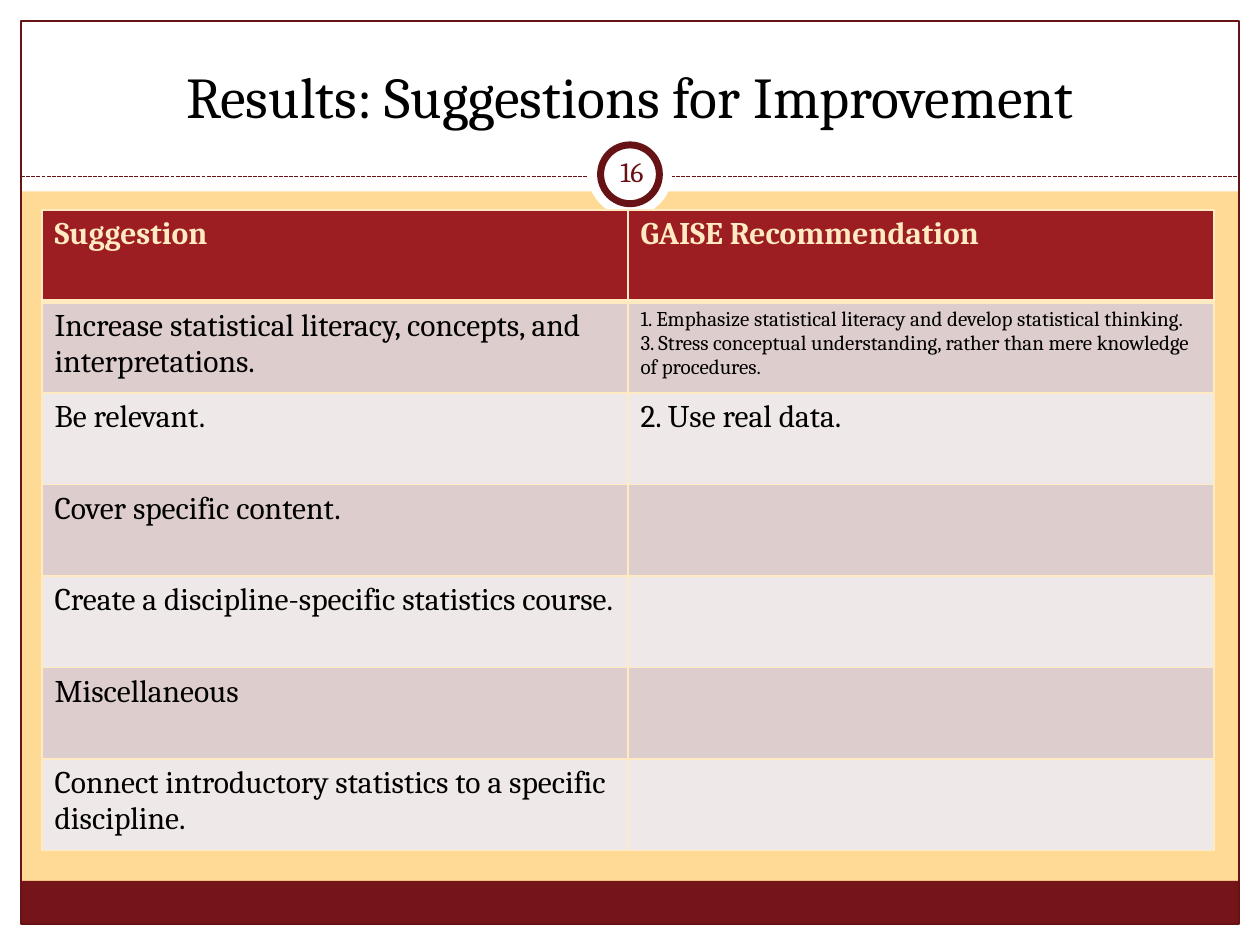
from lxml.etree import SubElement
from pptx import Presentation
from pptx.dml.color import RGBColor as Rgb
from pptx.enum.dml import MSO_LINE as Dash
from pptx.enum.shapes import MSO_CONNECTOR as Link, MSO_SHAPE as Kind
from pptx.enum.text import MSO_ANCHOR as Anchor, PP_ALIGN as Align
from pptx.oxml.ns import qn
from pptx.util import Inches, Pt

COLS, ROWS = 60, 45
UNIT = Inches(10) / COLS

HEX = {
    "page": "FFDA94", "white": "FFFFFF", "foot": "751519", "frame": "671316",
    "head": "9C1D22", "cream": "FFEAC1", "dark": "DECDCD", "light": "EFE8E8",
    "black": "000000",
}

GOALS = [
    ("Suggestion", ["GAISE Recommendation"]),
    ("Increase statistical literacy, concepts, and interpretations.",
     ["1. Emphasize statistical literacy and develop statistical thinking.",
      "3. Stress conceptual understanding, rather than mere knowledge of procedures."]),
    ("Be relevant.", ["2. Use real data."]),
    ("Cover specific content.", []),
    ("Create a discipline-specific statistics course.", []),
    ("Miscellaneous", []),
    ("Connect introductory statistics to a specific discipline.", []),
]


def tint(name):
    return Rgb.from_string(HEX[name])


def grid(*cells):
    """Turn counts of grid cells into slide lengths."""
    return [round(n * UNIT) for n in cells]


def paint(fill, name):
    fill.solid()
    fill.fore_color.rgb = tint(name)


def write(frame, lines, size, hue, bold=False, align=Align.LEFT):
    for i, line in enumerate(lines):
        para = frame.paragraphs[0] if i == 0 else frame.add_paragraph()
        para.alignment = align
        run = para.add_run()
        run.text = line
        form = {"name": "Cambria", "size": Pt(size), "bold": bold}
        for key, value in form.items():
            setattr(run.font, key, value)
        run.font.color.rgb = tint(hue)


def add_shape(slide, kind, box, fill=None, line=None, width=0.75):
    shape = slide.shapes.add_shape(kind, *grid(*box))
    shape.shadow.inherit = False
    if fill:
        paint(shape.fill, fill)
    else:
        shape.fill.background()
    if line:
        shape.line.color.rgb = tint(line)
        shape.line.width = Pt(width)
    else:
        shape.line.fill.background()


def add_rule(slide, ends):
    rule = slide.shapes.add_connector(Link.STRAIGHT, *grid(*ends))
    rule.line.color.rgb = tint("frame")
    rule.line.width = Pt(0.75)
    rule.line.dash_style = Dash.SQUARE_DOT
    SubElement(rule._element.spPr, qn("a:effectLst"))


def add_text(slide, box, text, size, hue, anchor, inset=(0.1, 0.05)):
    frame = slide.shapes.add_textbox(*grid(*box)).text_frame
    side, edge = map(Inches, inset)
    form = {
        "word_wrap": True, "vertical_anchor": anchor,
        "margin_left": side, "margin_right": side,
        "margin_top": edge, "margin_bottom": edge,
    }
    for key, value in form.items():
        setattr(frame, key, value)
    write(frame, [text], size, hue, align=Align.CENTER)


def edge_cell(cell, base):
    """Draw the cell's borders; base is the width of the lower one."""
    props = cell._tc.get_or_add_tcPr()
    widths = {"lnL": 1, "lnR": 1, "lnT": 1, "lnB": base}
    for i, (tag, width) in enumerate(widths.items()):
        line = props.makeelement(qn(f"a:{tag}"), {"w": str(Pt(width))})
        fill = SubElement(line, qn("a:solidFill"))
        SubElement(fill, qn("a:srgbClr"), val=HEX["cream"])
        props.insert(i, line)


def add_goals(slide, box):
    table = slide.shapes.add_table(len(GOALS), 2, *grid(*box)).table
    for r, (goal, advice) in enumerate(GOALS):
        head = r == 0
        fill = "head" if head else ("light", "dark")[r % 2]
        for c, lines in enumerate(([goal], advice)):
            cell = table.cell(r, c)
            paint(cell.fill, fill)
            edge_cell(cell, 3 if head else 1)
            size = 12 if len(lines) > 1 else 18
            write(cell.text_frame, lines, size, "cream" if head else "black", head)


def add_frame(slide):
    bands = [(0, 44, COLS, 1), (0, 0, COLS, 9.12), (0, 0, 1, ROWS), (59, 0, 1, ROWS)]
    for band in bands:
        add_shape(slide, Kind.RECTANGLE, band, "white")
    add_shape(slide, Kind.RECTANGLE, (1, 41.95, 58, 2.05), "foot")
    add_shape(slide, Kind.RECTANGLE, (1, 1, 58, 43), line="frame")
    add_rule(slide, (1, 8.4, 59, 8.4))
    add_shape(slide, Kind.OVAL, (28, 6.3, 4, 4), "white")
    add_shape(slide, Kind.OVAL, (28.6, 6.9, 2.8, 2.8), "white", "frame", 4)


def main():
    deck = Presentation()
    deck.slide_width, deck.slide_height = grid(COLS, ROWS)
    slide = deck.slides.add_slide(deck.slide_layouts[6])
    paint(slide.background.fill, "page")
    add_frame(slide)
    add_text(slide, (2, 1.5, 56, 5), "Results: Suggestions for Improvement",
             33, "black", Anchor.BOTTOM)
    add_goals(slide, (2, 10, 55.8, 30.5))
    add_text(slide, (28.6, 6.7, 3, 2.9), "16", 16, "frame", Anchor.MIDDLE, (0.05, 0.05))
    deck.save("out.pptx")


if __name__ == "__main__":
    main()
